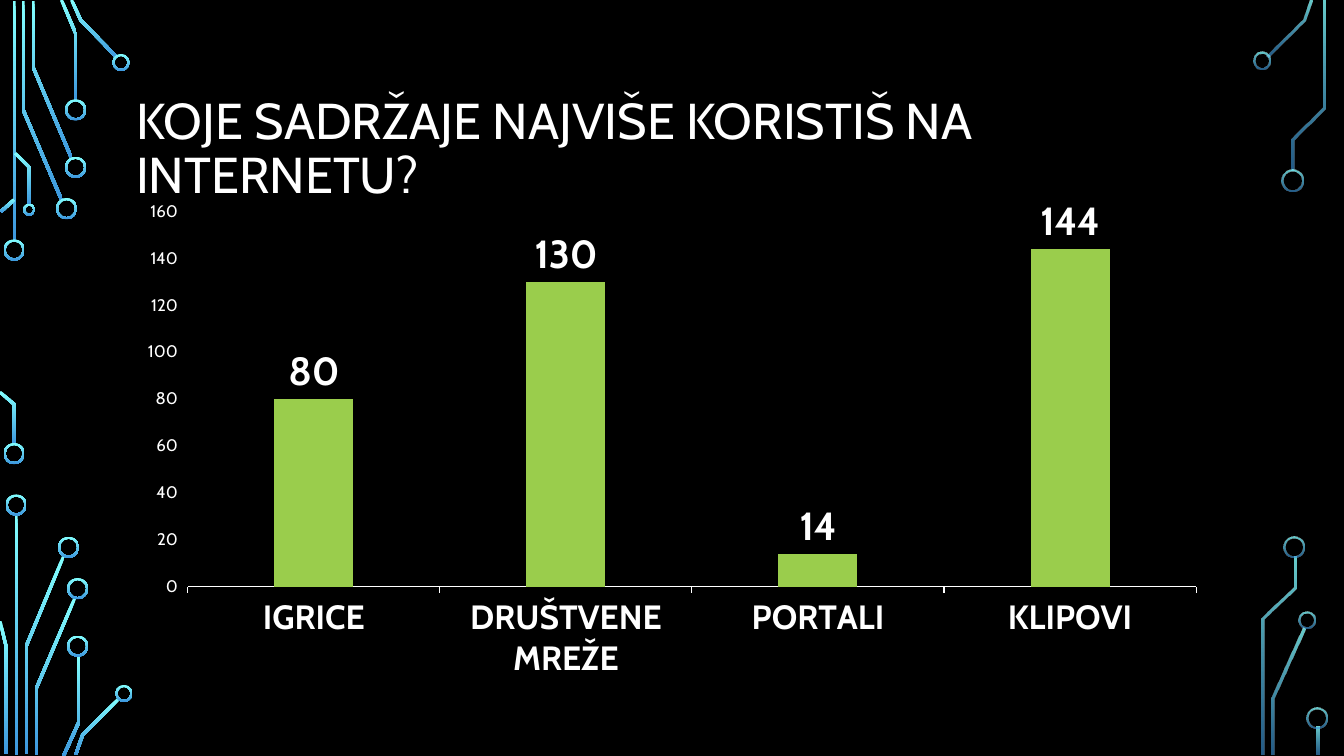
import math

from pptx import Presentation
from pptx.chart.data import CategoryChartData
from pptx.dml.color import RGBColor
from pptx.enum.chart import XL_CHART_TYPE, XL_LABEL_POSITION, XL_TICK_MARK
from pptx.enum.shapes import MSO_SHAPE
from pptx.enum.text import MSO_ANCHOR, MSO_AUTO_SIZE, PP_ALIGN
from pptx.oxml.ns import qn
from pptx.util import Inches, Pt
from lxml import etree

CLUSTERED = XL_CHART_TYPE.COLUMN_CLUSTERED
OUTSIDE_END = XL_LABEL_POSITION.OUTSIDE_END
TICK_OUT, TICK_NONE = XL_TICK_MARK.OUTSIDE, XL_TICK_MARK.NONE
DONUT = MSO_SHAPE.DONUT
MIDDLE = MSO_ANCHOR.MIDDLE
NO_AUTOFIT = MSO_AUTO_SIZE.NONE
LEFT = PP_ALIGN.LEFT

WIDTH, HEIGHT = 13.33, 7.5
COLORS = {"back": "000000", "text": "FFFFFF", "bar": "9ACD4C",
          "glow_top": "82FFFF", "glow_bottom": "3D97DE"}
FONT = "Cabin"
TRACE = 0.03   # width of a circuit trace
RING = 0.02    # thickness of a circuit ring
BIG, MEDIUM, SMALL = 0.21, 0.17, 0.12  # ring diameters

# Circuit points are inches from the left top corner of their panel.
LEFT_CIRCUIT = {
    "traces": [
        [(0.14, 0.01), (0.14, 2.4)],
        [(0.23, 0.01), (0.23, 1.09), (0.61, 1.98)],
        [(0.33, 0.01), (0.33, 0.67), (0.71, 1.57)],
        [(0.61, 0), (0.75, 0.33), (0.75, 1)],
        [(0.71, 0), (0.8, 0.2), (1.16, 0.57)],
        [(0.14, 1.98), (0.01, 2.1)],
        [(0, 3.89), (0.14, 4.01), (0.14, 4.41)],
        [(0.15, 1.52), (0.29, 1.66), (0.29, 2.03)],
        [(0.16, 5.1), (0.16, 7.49)],
        [(0.26, 7.48), (0.26, 6.41), (0.63, 5.52)],
        [(0, 6.16), (0.06, 6.41), (0.06, 7.48)],
        [(0.36, 7.49), (0.36, 6.83), (0.74, 5.94)],
        [(0.63, 7.5), (0.78, 7.17), (0.78, 6.5)],
        [(0.75, 7.49), (0.82, 7.29), (1.18, 6.93)],
    ],
    "rings": [
        (0.14, 2.48, BIG), (0.14, 4.5, BIG), (0.66, 2.07, BIG),
        (0.75, 1.66, BIG), (0.75, 1.09, BIG), (1.2, 0.62, MEDIUM),
        (0.29, 2.08, SMALL), (0.16, 5.01, BIG), (0.68, 5.43, BIG),
        (0.77, 5.84, BIG), (0.77, 6.41, BIG), (1.23, 6.88, MEDIUM),
    ],
}
RIGHT_CIRCUIT = {
    "traces": [
        [(0.6, 0), (0.53, 0.2), (0.17, 0.56)],
        [(0.23, 7.49), (0.23, 6.93), (0.53, 6.23)],
        [(0.42, 1.69), (0.42, 1.38), (0.73, 1.07), (0.73, 0.01)],
        [(0.13, 7.49), (0.13, 6.14), (0.44, 5.83), (0.44, 5.52)],
        [(0.67, 7.21), (0.67, 7.49)],
    ],
    "rings": [
        (0.12, 0.6, MEDIUM), (0.42, 1.79, BIG), (0.56, 6.15, MEDIUM),
        (0.43, 5.43, BIG), (0.66, 7.12, BIG),
    ],
}
CATEGORIES = ["IGRICE", "DRUŠTVENE MREŽE", "PORTALI", "KLIPOVI"]
VALUES = [80, 130, 14, 144]


def color(name):
    return RGBColor.from_string(COLORS[name])


def set_font(font, size, bold=False):
    for name, value in {"name": FONT, "size": Pt(size), "bold": bold}.items():
        setattr(font, name, value)
    font.color.rgb = color("text")


def glow(shape, opacities):
    """Fill with the vertical gradient, each stop at its own opacity in percent."""
    shape.shadow.inherit = False
    shape.line.fill.background()
    shape.fill.gradient()
    shape.fill.gradient_angle = 270
    stops = shape.fill.gradient_stops
    for stop, name in zip(stops, ("glow_top", "glow_bottom")):
        stop.color.rgb = color(name)
    gradient = shape._element.spPr.find(qn("a:gradFill"))
    for tint, opacity in zip(gradient.iter(qn("a:srgbClr")), opacities):
        if opacity < 100:
            etree.SubElement(tint, qn("a:alpha")).set("val", str(opacity * 1000))


def trace_side(points, offset):
    """Shift a polyline sideways, with mitred corners."""
    normals = []
    for (x1, y1), (x2, y2) in zip(points, points[1:]):
        length = math.hypot(x2 - x1, y2 - y1)
        normals.append(((y1 - y2) / length, (x2 - x1) / length))
    side = []
    before_after = zip(normals[:1] + normals, normals + normals[-1:])
    for (x, y), ((ax, ay), (bx, by)) in zip(points, before_after):
        reach = offset / (1 + ax * bx + ay * by)
        side.append((x + (ax + bx) * reach, y + (ay + by) * reach))
    return side


def add_circuit(slide, circuit, left, top, opacities):
    for points in circuit["traces"]:
        outline = trace_side(points, TRACE / 2) + trace_side(points, -TRACE / 2)[::-1]
        corners = [(Inches(left + x), Inches(top + y)) for x, y in outline]
        builder = slide.shapes.build_freeform(*corners[0])
        builder.add_line_segments(corners[1:], close=True)
        glow(builder.convert_to_shape(), opacities)
    for x, y, size in circuit["rings"]:
        box = (left + x - size / 2, top + y - size / 2, size, size)
        ring = slide.shapes.add_shape(DONUT, *map(Inches, box))
        ring.adjustments[0] = RING / size
        glow(ring, opacities)


def add_title(slide, text, box):
    title = slide.shapes.title
    for name, value in zip(("left", "top", "width", "height"), box):
        setattr(title, name, Inches(value))
    frame = title.text_frame
    formats = {"word_wrap": True, "auto_size": NO_AUTOFIT, "vertical_anchor": MIDDLE}
    for name, value in formats.items():
        setattr(frame, name, value)
    para = frame.paragraphs[0]
    para.alignment = LEFT
    para.line_spacing = 0.9
    span = para.add_run()
    span.text = text
    set_font(span.font, 36)


def add_answers_chart(slide, box):
    data = CategoryChartData()
    data.categories = CATEGORIES
    data.add_series("Series 1", VALUES)
    chart = slide.shapes.add_chart(CLUSTERED, *map(Inches, box), data).chart
    chart.has_legend = chart.has_title = False
    set_font(chart.font, 10)

    for axis, size, bold in ((chart.category_axis, 24, True), (chart.value_axis, 12, False)):
        axis.has_major_gridlines = False
        axis.major_tick_mark, axis.minor_tick_mark = TICK_OUT, TICK_NONE
        set_font(axis.tick_labels.font, size, bold)
    chart.category_axis.format.line.color.rgb = color("text")
    chart.category_axis.format.line.width = Pt(0.75)
    chart.value_axis.format.line.fill.background()
    for name, value in {"minimum_scale": 0, "maximum_scale": 160, "major_unit": 20}.items():
        setattr(chart.value_axis, name, value)

    plot = chart.plots[0]
    for name, value in {"gap_width": 219, "overlap": -27, "vary_by_categories": False}.items():
        setattr(plot, name, value)
    bars = plot.series[0]
    bars.format.fill.solid()
    bars.format.fill.fore_color.rgb = color("bar")
    labels = bars.data_labels
    labels.show_value = True
    labels.position = OUTSIDE_END
    set_font(labels.font, 28, True)


def main():
    deck = Presentation()
    deck.slide_width, deck.slide_height = Inches(WIDTH), Inches(HEIGHT)
    page = deck.slides.add_slide(deck.slide_layouts[5])
    page.background.fill.solid()
    page.background.fill.fore_color.rgb = color("back")
    add_circuit(page, LEFT_CIRCUIT, 0, 0, (100, 100))
    add_circuit(page, RIGHT_CIRCUIT, 12.4, 0, (80, 60))
    add_title(page, "KOJE SADRŽAJE NAJVIŠE KORISTIŠ NA INTERNETU?", (1.25, 0.68, 10.83, 1.62))
    add_answers_chart(page, (1.25, 1.9, 10.83, 4.93))
    deck.save("out.pptx")


if __name__ == "__main__":
    main()
